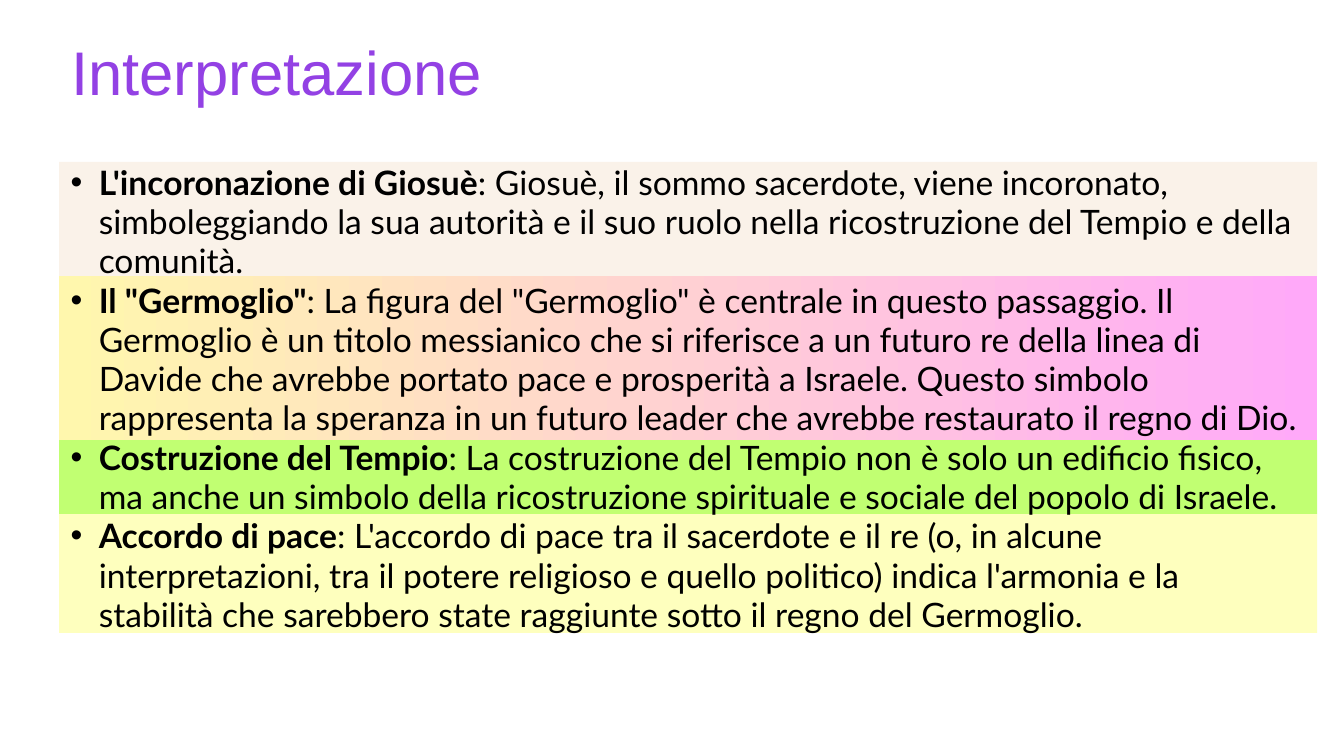
"""Build the "Interpretazione" slide: four key points on coloured bands."""
from lxml.etree import SubElement
from pptx import Presentation
from pptx.dml.color import RGBColor
from pptx.enum.shapes import MSO_SHAPE as Shape
from pptx.enum.text import MSO_ANCHOR as Anchor, MSO_AUTO_SIZE as AutoSize, PP_ALIGN as Align
from pptx.oxml.ns import qn
from pptx.util import Emu, Pt

TITLE = "Interpretazione"
POINTS = [
    ("L'incoronazione di Giosuè",
     ": Giosuè, il sommo sacerdote, viene incoronato, simboleggiando la sua autorità e il suo "
     "ruolo nella ricostruzione del Tempio e della comunità."),
    ('Il "Germoglio"',
     ': La figura del "Germoglio" è centrale in questo passaggio. Il Germoglio è un titolo '
     "messianico che si riferisce a un futuro re della linea di Davide che avrebbe portato pace "
     "e prosperità a Israele. Questo simbolo rappresenta la speranza in un futuro leader che "
     "avrebbe restaurato il regno di Dio."),
    ("Costruzione del Tempio",
     ": La costruzione del Tempio non è solo un edificio fisico, ma anche un simbolo della "
     "ricostruzione spirituale e sociale del popolo di Israele."),
    ("Accordo di pace",
     ": L'accordo di pace tra il sacerdote e il re (o, in alcune interpretazioni, tra il potere "
     "religioso e quello politico) indica l'armonia e la stabilità che sarebbero state raggiunte "
     "sotto il regno del Germoglio."),
]
BANDS = [(170, ["FAF2E9"]), (244, ["FFF7AD", "FFA9F9"]), (110, ["C1FF72"]), (177, ["FEFFBE"])]
BAND_LEFT, BAND_TOP, BAND_WIDTH = 88, 241, 1872
TITLE_BOX = (106, 38, 1725, 145)
POINTS_BOX = (62, 242, 1876, 700)
INDENT, HANGING = 85, 42


def px(value):
    return Emu(value * 9144)


def color(value):
    return RGBColor.from_string(value)


def add_band(slide, top, height, colors):
    shape = slide.shapes.add_shape(
        Shape.RECTANGLE, px(BAND_LEFT), px(top), px(BAND_WIDTH), px(height))
    shape.shadow.inherit = False
    shape.line.fill.background()
    if len(colors) == 1:
        shape.fill.solid()
        shape.fill.fore_color.rgb = color(colors[0])
        return
    shape.fill.gradient()
    shape.fill.gradient_angle = 0
    for stop, value in zip(shape.fill.gradient_stops, colors):
        stop.color.rgb = color(value)


def format_frame(frame, anchor):
    frame.word_wrap = True
    frame.auto_size = AutoSize.NONE
    frame.vertical_anchor = anchor
    frame.margin_left = frame.margin_right = frame.margin_top = frame.margin_bottom = 0


def add_text(paragraph, text, *, size, font, fill, bold=False):
    run = paragraph.add_run()
    run.text = text
    run.font.size, run.font.name, run.font.bold = Pt(size), font, bold
    run.font.color.rgb = color(fill)


def format_paragraph(paragraph, line_height, bullet=None):
    paragraph.alignment = Align.LEFT
    paragraph.line_spacing = Pt(line_height)
    if bullet:
        properties = paragraph._p.get_or_add_pPr()
        properties.set("marL", str(px(INDENT)))
        properties.set("indent", str(px(-HANGING)))
        SubElement(properties, qn("a:buFont"), typeface="Arial")
        SubElement(properties, qn("a:buChar"), char=bullet)


def main():
    presentation = Presentation()
    presentation.slide_width, presentation.slide_height = px(2000), px(1125)
    slide = presentation.slides.add_slide(presentation.slide_layouts[5])

    top = BAND_TOP
    for height, colors in BANDS:
        add_band(slide, top, height, colors)
        top += height

    frame = slide.shapes.add_textbox(*map(px, POINTS_BOX)).text_frame
    format_frame(frame, Anchor.TOP)
    for index, (heading, body) in enumerate(POINTS):
        paragraph = frame.add_paragraph() if index else frame.paragraphs[0]
        format_paragraph(paragraph, 42.1, bullet="•")
        for text, bold in ((heading, True), (body, False)):
            add_text(paragraph, text, size=36, font="Lato", fill="000000", bold=bold)

    title = slide.shapes.title
    title.left, title.top, title.width, title.height = map(px, TITLE_BOX)
    format_frame(title.text_frame, Anchor.MIDDLE)
    paragraph = title.text_frame.paragraphs[0]
    format_paragraph(paragraph, 71.3)
    add_text(paragraph, TITLE, size=66, font="Arial", fill="9341E4")

    presentation.save("out.pptx")


if __name__ == "__main__":
    main()
